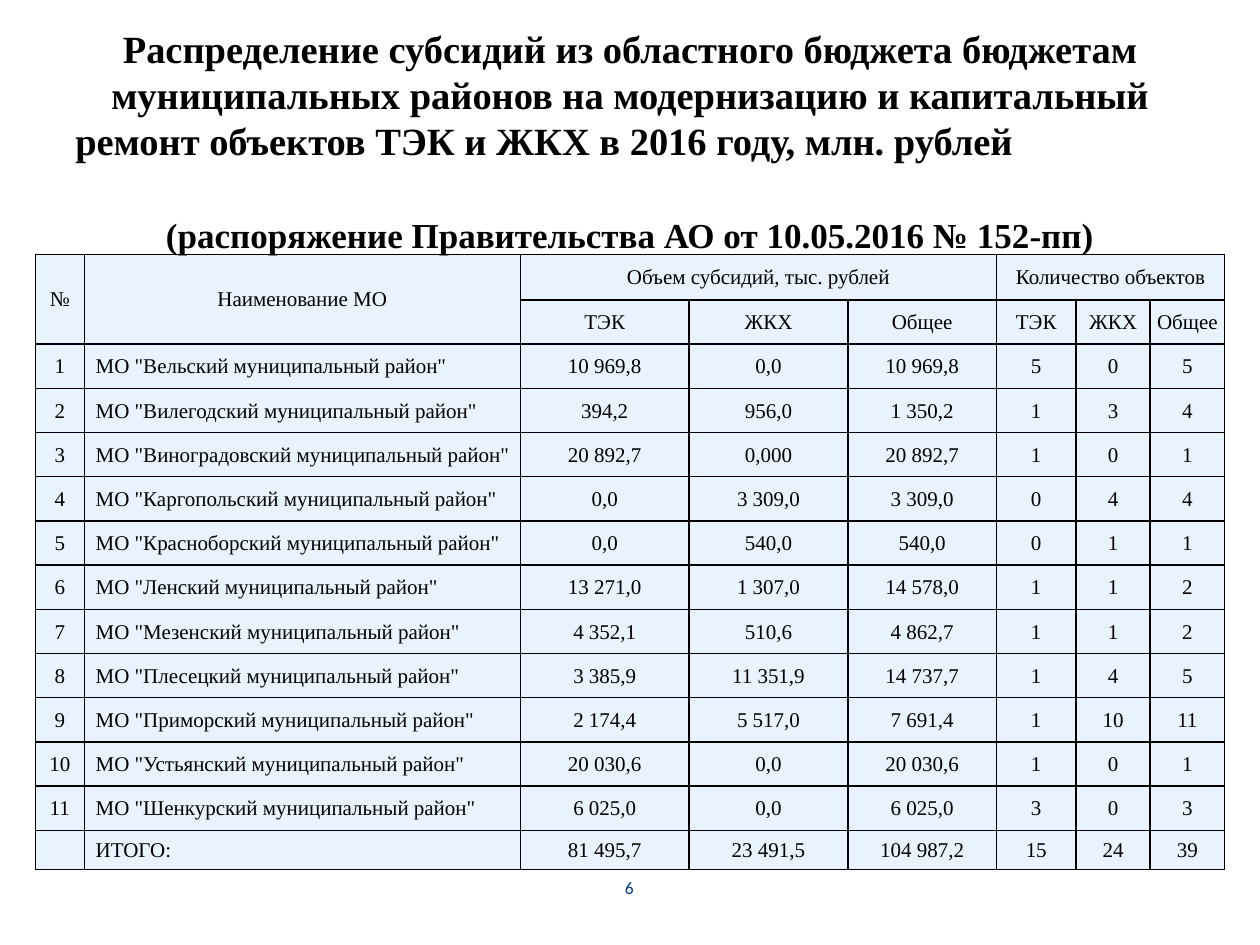
import pptx
import pptx.dml.color
import pptx.enum.text
import pptx.oxml
import pptx.oxml.ns
import pptx.util

Inches, Pt = pptx.util.Inches, pptx.util.Pt
ALIGN = pptx.enum.text.PP_ALIGN
MIDDLE = pptx.enum.text.MSO_ANCHOR.MIDDLE

SERIF = "Times New Roman"
BLACK, CELL_BLUE, PAGE_BLUE = "000000", "E8F3FF", "073E87"
TITLE_LINE = 26.3

# text, size, alignment, space before
TITLE = [
    ("Распределение субсидий из областного бюджета бюджетам "
     "муниципальных районов на модернизацию и капитальный", 22, ALIGN.CENTER, 0),
    ("ремонт объектов ТЭК и ЖКХ в 2016 году, млн. рублей", 22, ALIGN.LEFT, 0),
    ("(распоряжение Правительства АО от 10.05.2016 № 152-пп)", 20, ALIGN.CENTER, TITLE_LINE),
]
PAGE_NUMBER = "6"

# text, top row, left column, bottom row, right column
MERGED_HEADINGS = [
    ("№", 0, 0, 1, 0),
    ("Наименование МО", 0, 1, 1, 1),
    ("Объем субсидий, тыс. рублей", 0, 2, 0, 4),
    ("Количество объектов", 0, 5, 0, 7),
]
SUBHEADINGS = ["ТЭК", "ЖКХ", "Общее"] * 2
DISTRICTS = [
    ("Вельский", "10 969,8", "0,0", "10 969,8", "5", "0", "5"),
    ("Вилегодский", "394,2", "956,0", "1 350,2", "1", "3", "4"),
    ("Виноградовский", "20 892,7", "0,000", "20 892,7", "1", "0", "1"),
    ("Каргопольский", "0,0", "3 309,0", "3 309,0", "0", "4", "4"),
    ("Красноборский", "0,0", "540,0", "540,0", "0", "1", "1"),
    ("Ленский", "13 271,0", "1 307,0", "14 578,0", "1", "1", "2"),
    ("Мезенский", "4 352,1", "510,6", "4 862,7", "1", "1", "2"),
    ("Плесецкий", "3 385,9", "11 351,9", "14 737,7", "1", "4", "5"),
    ("Приморский", "2 174,4", "5 517,0", "7 691,4", "1", "10", "11"),
    ("Устьянский", "20 030,6", "0,0", "20 030,6", "1", "0", "1"),
    ("Шенкурский", "6 025,0", "0,0", "6 025,0", "3", "0", "3"),
]
TOTALS = ["", "ИТОГО:", "81 495,7", "23 491,5", "104 987,2", "15", "24", "39"]

TABLE_LEFT, TABLE_TOP, TABLE_HEIGHT = 0.28, 2.02, 4.88
COLUMN_WIDTHS = [0.39, 3.46, 1.34, 1.26, 1.18, 0.63, 0.59, 0.59]
FIRST_ROW, LAST_ROW = 0.36, 0.31


def color(hex_string):
    return pptx.dml.color.RGBColor.from_string(hex_string)


def add_run(paragraph, text, size, font=SERIF, ink=BLACK, bold=False):
    run = paragraph.add_run()
    run.text = text
    run.font.size, run.font.name, run.font.bold = Pt(size), font, bold
    run.font.color.rgb = color(ink)


def add_text_frame(slide, left, top, width, height):
    frame = slide.shapes.add_textbox(
        Inches(left), Inches(top), Inches(width), Inches(height)).text_frame
    frame.word_wrap = True
    frame.vertical_anchor = MIDDLE
    return frame


def add_title(slide):
    frame = add_text_frame(slide, 0.5, 0.68, 9, 0.87)
    for index, (text, size, alignment, before) in enumerate(TITLE):
        paragraph = frame.add_paragraph() if index else frame.paragraphs[0]
        paragraph.alignment = alignment
        paragraph.line_spacing = Pt(TITLE_LINE)
        paragraph.space_before = Pt(before)
        add_run(paragraph, text, size, bold=True)


def add_borders(cell):
    properties = cell._tc.get_or_add_tcPr()
    for index, side in enumerate(("lnL", "lnR", "lnT", "lnB")):
        properties.insert(index, pptx.oxml.parse_xml(
            f'<a:{side} {pptx.oxml.ns.nsdecls("a")} w="12700"><a:solidFill>'
            f'<a:srgbClr val="{BLACK}"/></a:solidFill></a:{side}>'))


def style_cell(cell, margin_left):
    cell.fill.solid()
    cell.fill.fore_color.rgb = color(CELL_BLUE)
    cell.vertical_anchor = MIDDLE
    cell.margin_left = Inches(margin_left)
    cell.margin_right = cell.margin_top = Inches(0.01)
    cell.margin_bottom = 0
    add_borders(cell)


def write_cell(cell, text, alignment=ALIGN.CENTER):
    paragraph = cell.text_frame.paragraphs[0]
    paragraph.alignment = alignment
    if text:
        add_run(paragraph, text, 12)


def add_subsidy_table(slide):
    body = [[str(number), f'МО "{name} муниципальный район"', *values]
            for number, (name, *values) in enumerate(DISTRICTS, 1)] + [TOTALS]
    row_count = len(body) + 2
    table = slide.shapes.add_table(
        row_count, len(COLUMN_WIDTHS), Inches(TABLE_LEFT), Inches(TABLE_TOP),
        Inches(sum(COLUMN_WIDTHS)), Inches(TABLE_HEIGHT)).table
    for column, width in zip(table.columns, COLUMN_WIDTHS):
        column.width = Inches(width)
    middle_row = (TABLE_HEIGHT - FIRST_ROW - LAST_ROW) / (row_count - 2)
    heights = [FIRST_ROW] + [middle_row] * (row_count - 2) + [LAST_ROW]
    for row_index, (row, height) in enumerate(zip(table.rows, heights)):
        row.height = Inches(height)
        for column_index, cell in enumerate(row.cells):
            is_name = row_index > 1 and column_index == 1
            style_cell(cell, 0.09 if is_name else 0.01)

    for text, top, left, bottom, right in MERGED_HEADINGS:
        table.cell(top, left).merge(table.cell(bottom, right))
        write_cell(table.cell(top, left), text)
    for column_index, text in enumerate(SUBHEADINGS, 2):
        write_cell(table.cell(1, column_index), text)
    for row_index, values in enumerate(body, 2):
        for column_index, text in enumerate(values):
            write_cell(table.cell(row_index, column_index), text,
                       ALIGN.LEFT if column_index == 1 else ALIGN.CENTER)


def add_page_number(slide):
    paragraph = add_text_frame(slide, 4.36, 6.84, 1.27, 0.4).paragraphs[0]
    paragraph.alignment = ALIGN.CENTER
    add_run(paragraph, PAGE_NUMBER, 10, "Calibri", PAGE_BLUE)


def main():
    presentation = pptx.Presentation()
    presentation.slide_width, presentation.slide_height = Inches(10), Inches(7.5)
    slide = presentation.slides.add_slide(presentation.slide_layouts[6])
    add_page_number(slide)
    add_subsidy_table(slide)
    add_title(slide)
    presentation.save("out.pptx")


if __name__ == "__main__":
    main()
